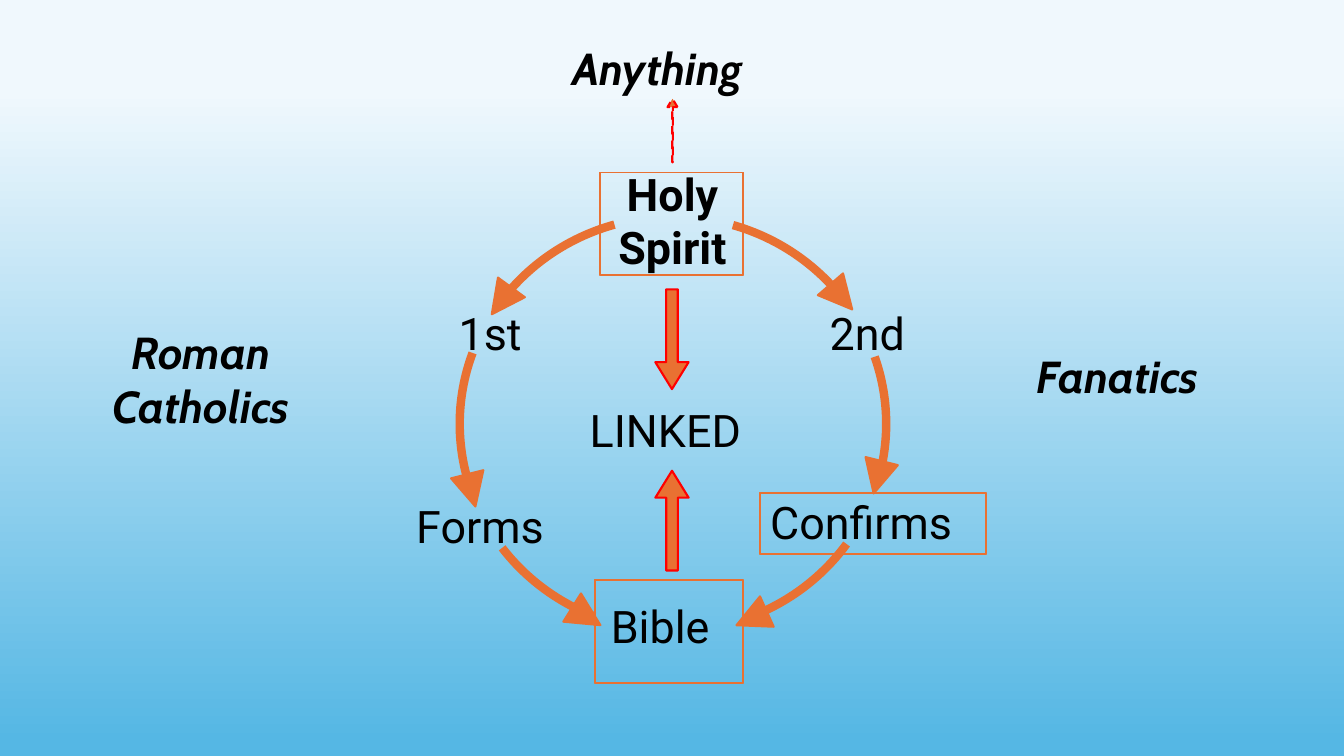
from dataclasses import dataclass

from pptx import Presentation
from pptx.dml.color import RGBColor
from pptx.enum.dml import MSO_LINE
from pptx.enum.shapes import MSO_SHAPE
from pptx.enum.text import MSO_AUTO_SIZE, PP_ALIGN
from pptx.util import Inches, Pt

COLORS = {
    "sky_top": "F0F8FD",
    "sky_bottom": "55B7E4",
    "orange": "E97132",
    "red": "FF0000",
    "text": "000000",
}
RING = (4.56, 2.15, 4.23, 4.11)
HEAD_SIZE = 0.33


@dataclass
class Label:
    text: str
    box: tuple[float, float, float, float]
    font: str = "Roboto"
    bold: bool = False
    italic: bool = False
    centered: bool = False


@dataclass
class CurvedArrow:
    start: float
    end: float
    head_left: float
    head_top: float
    head_rotation: float


@dataclass
class BlockArrow:
    box: tuple[float, float, float, float]
    rotation: float = 0
    shaft: float = 0.35
    head: float = 0.81
    dashed: bool = False


@dataclass
class Frame:
    box: tuple[float, float, float, float]
    weight: float = 1.5


LABELS = [
    Label("Holy Spirit", (5.97, 1.6, 1.4, 1.18), bold=True, centered=True),
    Label("1st", (4.45, 2.98, 0.88, 0.64)),
    Label("Forms", (4.03, 4.9, 1.72, 0.64)),
    Label("Bible", (5.96, 5.89, 1.42, 0.64)),
    Label("2nd", (8.13, 2.98, 1.13, 0.64)),
    Label("Confirms", (7.54, 4.86, 2.35, 0.64)),
    Label("LINKED", (5.75, 3.95, 1.85, 0.64)),
    Label("Anything", (5.58, 0.36, 2.33, 0.64), "Cabin", True, True),
    Label("Fanatics", (10.18, 3.41, 2.04, 0.64), "Cabin", True, True),
    Label("Roman Catholics", (0.83, 3.17, 2.33, 1.18), "Cabin", True, True, True),
]
CURVED_ARROWS = [
    CurvedArrow(214, 253.65, 4.81, 2.82, 36.2),
    CurvedArrow(160, 199.5, 4.51, 4.7, 345.8),
    CurvedArrow(112.1, 144, 5.65, 5.95, 301.9),
    CurvedArrow(286.8, 322.7, 8.18, 2.78, 319.1),
    CurvedArrow(341.6, 16.2, 8.54, 4.57, 14),
    CurvedArrow(34.7, 63.9, 7.29, 5.97, 65.8),
]
BLOCK_ARROWS = [
    BlockArrow((6.5, 2.87, 0.33, 0.99)),
    BlockArrow((6.5, 4.67, 0.33, 0.99), 180),
    BlockArrow((6.62, 0.98, 0.1, 0.63), 180, 0.07, 0.83, True),
]
FRAMES = [
    Frame((7.54, 4.89, 2.24, 0.61)),
    Frame((5.95, 1.71, 1.42, 1.02), 1),
    Frame((5.9, 5.75, 1.47, 1.03)),
]


def color(name: str) -> RGBColor:
    return RGBColor.from_string(COLORS[name])


def add_preset(shapes, preset, box, weight, line="orange", filled=False):
    sp = shapes.add_shape(preset, *map(Inches, box))
    sp.shadow.inherit = False
    if filled:
        sp.fill.solid()
        sp.fill.fore_color.rgb = color("orange")
    else:
        sp.fill.background()
    sp.line.color.rgb = color(line)
    sp.line.width = Pt(weight)
    return sp


def add_label(s, label: Label) -> None:
    tf = s.shapes.add_textbox(*map(Inches, label.box)).text_frame
    tf.word_wrap = True
    tf.auto_size = MSO_AUTO_SIZE.SHAPE_TO_FIT_TEXT
    tf.text = label.text
    p = tf.paragraphs[0]
    p.alignment = PP_ALIGN.CENTER if label.centered else PP_ALIGN.LEFT
    r = p.runs[0]
    r.font.name = label.font
    r.font.size = Pt(32)
    r.font.bold = label.bold
    r.font.italic = label.italic
    r.font.color.rgb = color("text")


def add_curved_arrow(s, arrow: CurvedArrow) -> None:
    group = s.shapes.add_group_shape()
    arc = add_preset(group.shapes, MSO_SHAPE.ARC, RING, 6)
    for i, degrees in enumerate((arrow.start, arrow.end)):
        arc.adjustments[i] = degrees * 0.6
    head_box = (arrow.head_left, arrow.head_top, HEAD_SIZE, HEAD_SIZE)
    head = add_preset(group.shapes, MSO_SHAPE.FLOWCHART_MERGE, head_box, 1.5, filled=True)
    head.rotation = arrow.head_rotation


def add_block_arrow(s, arrow: BlockArrow) -> None:
    sp = add_preset(s.shapes, MSO_SHAPE.DOWN_ARROW, arrow.box, 1.5, "red", True)
    sp.adjustments[0] = arrow.shaft
    sp.adjustments[1] = arrow.head
    sp.rotation = arrow.rotation
    if arrow.dashed:
        sp.line.dash_style = MSO_LINE.DASH


def add_frame(s, frame: Frame) -> None:
    sp = add_preset(s.shapes, MSO_SHAPE.FRAME, frame.box, frame.weight)
    sp.adjustments[0] = 0


def set_background(s) -> None:
    fill = s.background.fill
    fill.gradient()
    fill.gradient_angle = 270
    stops = ((0.12, "sky_top"), (0.98, "sky_bottom"))
    for stop, (position, name) in zip(fill.gradient_stops, stops):
        stop.position = position
        stop.color.rgb = color(name)


def main() -> None:
    prs = Presentation()
    prs.slide_width = Inches(13.33)
    prs.slide_height = Inches(7.5)
    s = prs.slides.add_slide(prs.slide_layouts[6])
    set_background(s)
    for arrow in CURVED_ARROWS:
        add_curved_arrow(s, arrow)
    for block_arrow in BLOCK_ARROWS:
        add_block_arrow(s, block_arrow)
    for frame in FRAMES:
        add_frame(s, frame)
    for label in LABELS:
        add_label(s, label)
    prs.save("out.pptx")


if __name__ == "__main__":
    main()
